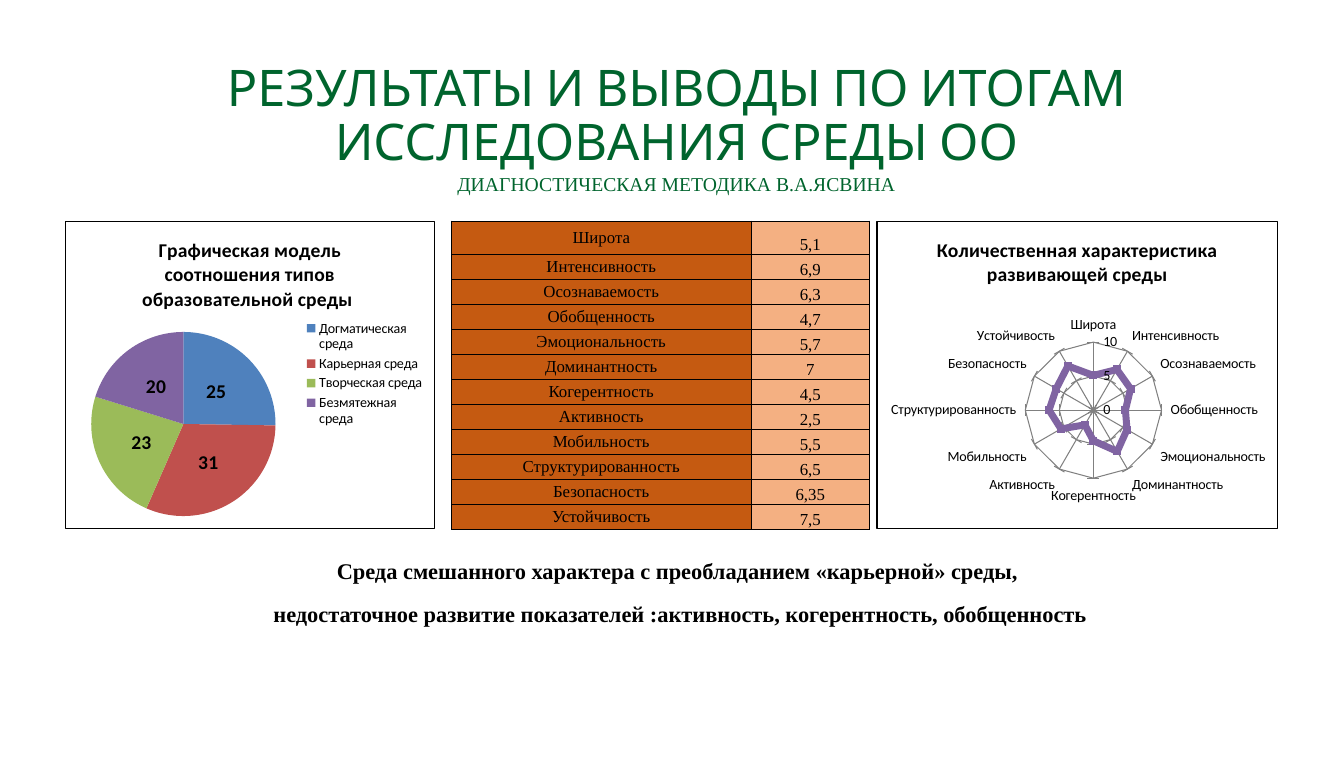
import dataclasses
import typing

import lxml.etree
import pptx
import pptx.chart.chart
import pptx.chart.data
import pptx.dml.color
import pptx.enum.chart
import pptx.enum.text
import pptx.oxml.ns
import pptx.slide
import pptx.text.text
import pptx.util

PX = 9144  # 100 px to the inch
qn = pptx.oxml.ns.qn
RGB = pptx.dml.color.RGBColor
Pt = pptx.util.Pt
Anchor = pptx.enum.text.MSO_ANCHOR
Chart = pptx.chart.chart.Chart
ChartType = pptx.enum.chart.XL_CHART_TYPE
TickMark = pptx.enum.chart.XL_TICK_MARK


@dataclasses.dataclass(frozen=True)
class Theme:
    heading_font: str = "Cabin"
    body_font: str = "Times New Roman"
    chart_font: str = "Calibri"
    green: str = "00642D"
    black: str = "000000"
    white: str = "FFFFFF"
    grid: str = "808080"
    name_fill: str = "C55A11"
    value_fill: str = "F4B082"
    radar: str = "8064A2"
    heading: int = 36
    conclusion: int = 16
    subtitle: int = 14
    chart_title: int = 14
    cell: int = 12
    chart_text: int = 10


THEME = Theme()


class Box(typing.NamedTuple):
    left: int
    top: int
    width: int
    height: int

    def emu(self) -> list[int]:
        return [px(v) for v in self]


class Sector(typing.NamedTuple):
    name: str
    share: int
    color: str


class Indicator(typing.NamedTuple):
    name: str
    score: float
    shown: str


SECTORS = [
    Sector("Догматическая среда", 25, "4F81BD"),
    Sector("Карьерная среда", 31, "C0504D"),
    Sector("Творческая среда", 23, "9BBB59"),
    Sector("Безмятежная среда", 20, "8064A2"),
]
INDICATORS = [
    Indicator("Широта", 5.1, "5,1"),
    Indicator("Интенсивность", 6.9, "6,9"),
    Indicator("Осознаваемость", 6.3, "6,3"),
    Indicator("Обобщенность", 4.7, "4,7"),
    Indicator("Эмоциональность", 5.7, "5,7"),
    Indicator("Доминантность", 7, "7"),
    Indicator("Когерентность", 4.5, "4,5"),
    Indicator("Активность", 2.5, "2,5"),
    Indicator("Мобильность", 5.5, "5,5"),
    Indicator("Структурированность", 6.5, "6,5"),
    Indicator("Безопасность", 6.3, "6,35"),
    Indicator("Устойчивость", 7.5, "7,5"),
]


def px(value: float) -> int:
    return round(value * PX)


def write(p: pptx.text.text._Paragraph, text: str, *, size: int, font: str = THEME.body_font,
          color: str = THEME.black, bold: bool = False, spacing: float = 1.0,
          before: float = 0) -> None:
    p.alignment = pptx.enum.text.PP_ALIGN.CENTER
    p.line_spacing = spacing
    p.space_before = Pt(before)
    r = p.add_run()
    r.text = text
    r.font.name, r.font.size, r.font.bold = font, Pt(size), bold
    r.font.color.rgb = RGB.from_string(color)


def add_text_box(s: pptx.slide.Slide, box: Box) -> pptx.text.text.TextFrame:
    tf = s.shapes.add_textbox(*box.emu()).text_frame
    tf.word_wrap = True
    tf.margin_left = tf.margin_right = tf.margin_top = tf.margin_bottom = 0
    return tf


def add_line(parent: lxml.etree._Element, tag: str, width: float) -> None:
    ln = lxml.etree.SubElement(parent, qn(tag), w=str(Pt(width)))
    fill = lxml.etree.SubElement(ln, qn("a:solidFill"))
    lxml.etree.SubElement(fill, qn("a:srgbClr"), val=THEME.black)


def set_layout(parent: lxml.etree._Element, position: int, inner: bool,
               **fractions: float) -> None:
    for old in parent.findall(qn("c:layout")):
        parent.remove(old)
    layout = lxml.etree.Element(qn("c:layout"))
    manual = lxml.etree.SubElement(layout, qn("c:manualLayout"))
    if inner:
        lxml.etree.SubElement(manual, qn("c:layoutTarget"), val="inner")
    for mode in ("xMode", "yMode"):
        lxml.etree.SubElement(manual, qn(f"c:{mode}"), val="edge")
    for key, value in fractions.items():
        lxml.etree.SubElement(manual, qn(f"c:{key}"), val=str(value))
    parent.insert(position, layout)


def add_chart(s: pptx.slide.Slide, kind: ChartType, box: Box, title: str,
              points: typing.Sequence[tuple[str, float]], **plot: float) -> Chart:
    data = pptx.chart.data.CategoryChartData()
    data.categories = [name for name, _ in points]
    data.add_series("Series 1", [value for _, value in points])
    chart = s.shapes.add_chart(kind, *box.emu(), data).chart
    chart.font.name, chart.font.size = THEME.chart_font, Pt(THEME.chart_text)
    chart.font.color.rgb = RGB.from_string(THEME.black)
    chart.has_title = True
    write(chart.chart_title.text_frame.paragraphs[0], title, size=THEME.chart_title,
          font=THEME.chart_font, bold=True)
    chart.chart_title.include_in_layout = False
    # Frame and plot area
    root = chart.element
    frame = lxml.etree.Element(qn("c:spPr"))
    fill = lxml.etree.SubElement(frame, qn("a:solidFill"))
    lxml.etree.SubElement(fill, qn("a:srgbClr"), val=THEME.white)
    add_line(frame, "a:ln", 0.75)
    root.find(qn("c:chart")).addnext(frame)
    set_layout(root.find(".//" + qn("c:plotArea")), 0, True, **plot)
    return chart


def add_pie(s: pptx.slide.Slide, box: Box) -> None:
    chart = add_chart(s, ChartType.PIE, box,
                      "Графическая модель соотношения типов образовательной среды ",
                      [(c.name, c.share) for c in SECTORS], x=0.07, y=0.36, w=0.5, h=0.6)
    chart.has_legend = True
    chart.legend.position = pptx.enum.chart.XL_LEGEND_POSITION.RIGHT
    chart.legend.include_in_layout = False
    set_layout(chart.legend._element, 1, False, x=0.64, y=0.31, w=0.34, h=0.37)
    plot = chart.plots[0]
    plot.vary_by_categories = True
    for i, sector in enumerate(SECTORS):
        fill = plot.series[0].points[i].format.fill
        fill.solid()
        fill.fore_color.rgb = RGB.from_string(sector.color)
    plot.has_data_labels = True
    labels = plot.data_labels
    labels.show_value = True
    labels.number_format, labels.number_format_is_linked = "0", False
    labels.position = pptx.enum.chart.XL_LABEL_POSITION.CENTER
    labels.font.size, labels.font.bold = Pt(THEME.chart_title), True


def add_radar(s: pptx.slide.Slide, box: Box) -> None:
    chart = add_chart(s, ChartType.RADAR_MARKERS, box,
                      "Количественная характеристика развивающей среды",
                      [(n.name, n.score) for n in INDICATORS], x=0.37, y=0.39, w=0.34, h=0.45)
    chart.has_legend = False
    chart.plots[0].vary_by_categories = False
    series = chart.plots[0].series[0]
    series.smooth = False
    series.format.line.width = Pt(5)
    series.marker.style = pptx.enum.chart.XL_MARKER_STYLE.SQUARE
    series.marker.size = 5
    series.marker.format.fill.solid()
    radar = RGB.from_string(THEME.radar)
    series.format.line.color.rgb = series.marker.format.fill.fore_color.rgb = radar
    series.marker.format.line.color.rgb = radar
    axis = chart.value_axis
    axis.minimum_scale, axis.maximum_scale, axis.major_unit = 0, 10, 5
    axis.tick_labels.number_format = "General"
    axis.tick_labels.number_format_is_linked = False
    for axis, mark in ((chart.category_axis, TickMark.OUTSIDE),
                       (chart.value_axis, TickMark.CROSS)):
        axis.major_tick_mark = mark
        axis.has_major_gridlines = True
        for line in (axis.format.line, axis.major_gridlines.format.line):
            line.color.rgb, line.width = RGB.from_string(THEME.grid), Pt(0.75)


def add_score_table(s: pptx.slide.Slide, box: Box) -> None:
    table = s.shapes.add_table(len(INDICATORS), 2, *box.emu()).table
    table.first_row = table.horz_banding = False
    table.columns[0].width, table.columns[1].width = px(297), px(box.width - 297)
    first = 33
    other = (box.height - first) / (len(INDICATORS) - 1)
    for i, indicator in enumerate(INDICATORS):
        table.rows[i].height = px(other if i else first)
        columns = ((indicator.name, THEME.name_fill, Anchor.MIDDLE),
                   (indicator.shown, THEME.value_fill, Anchor.BOTTOM))
        for cell, (text, color, anchor) in zip(table.rows[i].cells, columns):
            cell.margin_left = cell.margin_right = cell.margin_top = cell.margin_bottom = 0
            cell.vertical_anchor = anchor
            for side in "LRTB":
                add_line(cell._tc.get_or_add_tcPr(), f"a:ln{side}", 0.5)
            cell.fill.solid()
            cell.fill.fore_color.rgb = RGB.from_string(color)
            write(cell.text_frame.paragraphs[0], text, size=THEME.cell)


def main() -> None:
    prs = pptx.Presentation()
    prs.slide_width, prs.slide_height = px(1331), px(750)
    s = prs.slides.add_slide(prs.slide_layouts[6])
    # Charts and table
    add_pie(s, Box(64, 219, 367, 305))
    add_radar(s, Box(868, 219, 398, 305))
    add_score_table(s, Box(447, 219, 414, 305))
    # Heading
    tf = add_text_box(s, Box(56, 62, 1228, 209))
    write(tf.paragraphs[0], "РЕЗУЛЬТАТЫ И ВЫВОДЫ ПО ИТОГАМ ИССЛЕДОВАНИЯ СРЕДЫ ОО",
          size=THEME.heading, font=THEME.heading_font, color=THEME.green, spacing=0.9)
    write(tf.add_paragraph(), "ДИАГНОСТИЧЕСКАЯ МЕТОДИКА В.А.ЯСВИНА",
          size=THEME.subtitle, color=THEME.green)
    # Conclusions
    tf = add_text_box(s, Box(72, 555, 1203, 67))
    write(tf.paragraphs[0], "Среда смешанного характера с преобладанием «карьерной» среды, ",
          size=THEME.conclusion, bold=True, spacing=0.9)
    write(tf.add_paragraph(),
          "недостаточное развитие показателей :активность, когерентность, обобщенность",
          size=THEME.conclusion, bold=True, spacing=0.9, before=13.3)
    prs.save("out.pptx")


if __name__ == "__main__":
    main()
